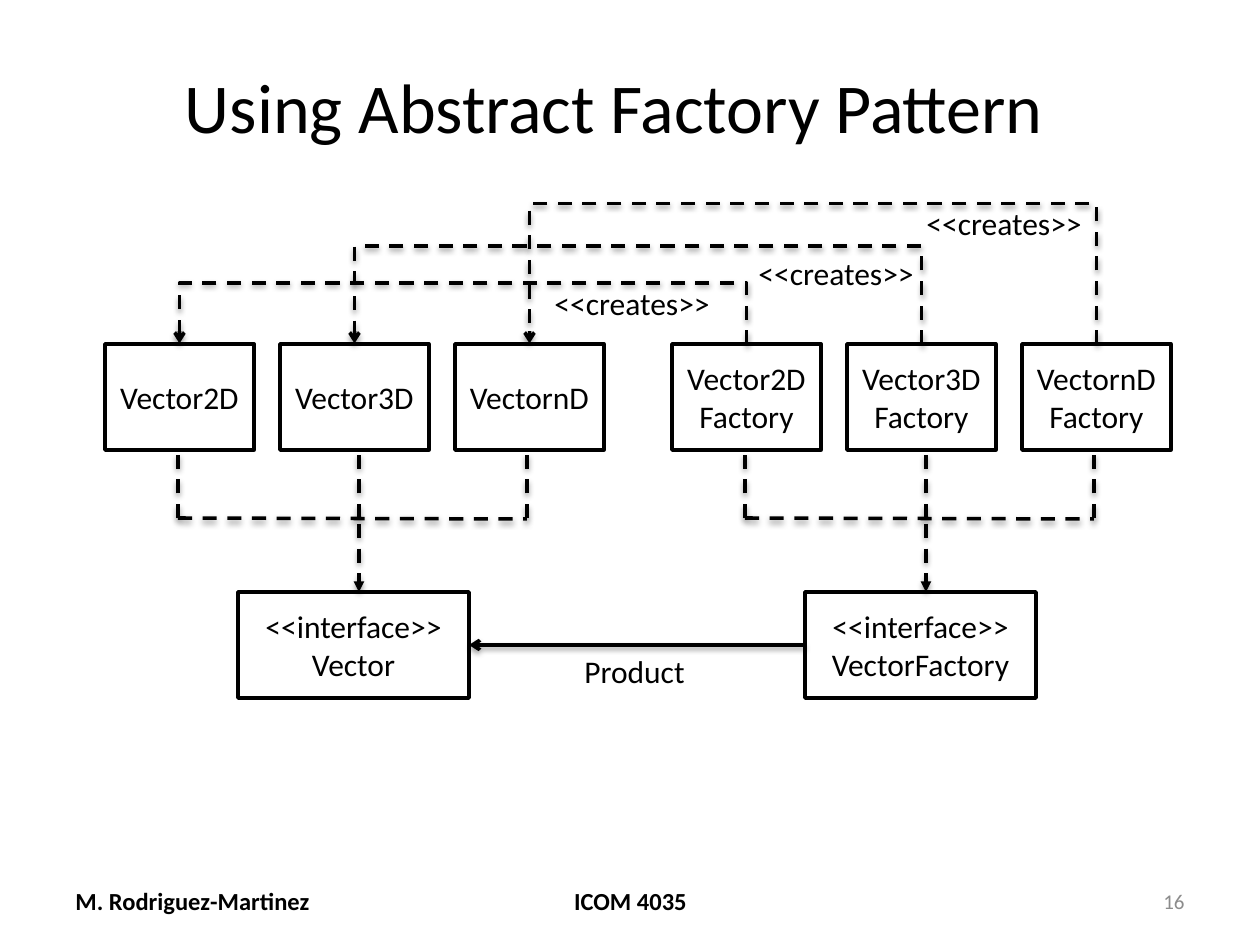
from pptx import Presentation
from pptx.dml.color import RGBColor
from pptx.enum.dml import MSO_LINE
from pptx.enum.shapes import MSO_CONNECTOR, MSO_SHAPE
from pptx.enum.text import MSO_ANCHOR, MSO_AUTO_SIZE, PP_ALIGN
from pptx.oxml.ns import qn
from pptx.util import Emu, Pt
from lxml import etree

COLORS = {"ink": "000000", "paper": "FFFFFF", "page_number": "8C8C8C"}
FONT = "Calibri"
EMU_PER_PX = 914400 / 126

BOX_WIDTH, BOX_HEIGHT, BOX_PITCH = 149, 106, 175
CLASS_TOP, INTERFACE_TOP = 344, 592
CLASS_BOTTOM = CLASS_TOP + BOX_HEIGHT
BUS_Y = 518
PRODUCT_LEFT, FACTORY_LEFT = 105, 672
CREATES_RISES = (62, 99, 142)


def px(value):
    return Emu(round(value * EMU_PER_PX))


def color(name):
    return RGBColor.from_string(COLORS[name])


def write(shape, lines, size, align, bold=False, ink="ink"):
    frame = shape.text_frame
    frame.text = "\n".join(lines)
    for paragraph in frame.paragraphs:
        paragraph.alignment = align
        paragraph.font.name = FONT
        paragraph.font.size = Pt(size)
        paragraph.font.bold = bold
        paragraph.font.color.rgb = color(ink)


def add_text(slide, bounds, text, size, align, **style):
    shape = slide.shapes.add_textbox(*map(px, bounds))
    shape.text_frame.word_wrap = True
    shape.text_frame.vertical_anchor = MSO_ANCHOR.MIDDLE
    write(shape, [text], size, align, **style)


def add_label(slide, left, top, width, text):
    shape = slide.shapes.add_textbox(px(left), px(top), px(width), px(50))
    shape.text_frame.word_wrap = False
    shape.text_frame.auto_size = MSO_AUTO_SIZE.SHAPE_TO_FIT_TEXT
    write(shape, [text], 18, PP_ALIGN.LEFT)


def add_box(slide, left, top, width, lines):
    shape = slide.shapes.add_shape(
        MSO_SHAPE.RECTANGLE, px(left), px(top), px(width), px(BOX_HEIGHT))
    shape.shadow.inherit = False
    shape.fill.solid()
    shape.fill.fore_color.rgb = color("paper")
    shape.line.color.rgb = color("ink")
    shape.line.width = Pt(2)
    shape.text_frame.word_wrap = True
    shape.text_frame.vertical_anchor = MSO_ANCHOR.MIDDLE
    write(shape, lines, 18, PP_ALIGN.CENTER)
    return shape


def add_line(slide, start, end, dashed=True, arrow=None, kind=MSO_CONNECTOR.STRAIGHT):
    """Add a connector that keeps the theme's soft shadow."""
    connector = slide.shapes.add_connector(kind, *map(px, (*start, *end)))
    connector.line.color.rgb = color("ink")
    connector.line.width = Pt(2)
    if dashed:
        connector.line.dash_style = MSO_LINE.DASH
    if arrow:
        line = connector.line._get_or_add_ln()
        etree.SubElement(line, qn("a:tailEnd"), type=arrow)
    return connector


def add_creates_arrow(slide, start_x, end_x, rise):
    """Add an elbow that climbs by rise, runs left and drops onto a class box."""
    span = start_x - end_x
    center_x = (start_x + end_x) / 2
    # A one-pixel-wide box turned upright, so the adjustment equals the rise.
    connector = add_line(
        slide, (center_x - 0.5, CLASS_TOP - span / 2),
        (center_x + 0.5, CLASS_TOP + span / 2),
        arrow="arrow", kind=MSO_CONNECTOR.ELBOW)
    properties = connector._element.spPr
    transform = properties.find(qn("a:xfrm"))
    transform.set("rot", "16200000")
    transform.set("flipV", "1")
    geometry = properties.find(qn("a:prstGeom"))
    adjustments = geometry.find(qn("a:avLst"))
    if adjustments is None:
        adjustments = etree.SubElement(geometry, qn("a:avLst"))
    etree.SubElement(adjustments, qn("a:gd"), name="adj1", fmla=f"val {rise * 100000}")


def add_hierarchy(slide, left, class_lines, interface_name):
    """Add three class boxes joined by dashed lines to their interface."""
    for index, lines in enumerate(class_lines):
        add_box(slide, left + index * BOX_PITCH, CLASS_TOP, BOX_WIDTH, lines)
    interface = add_box(slide, left + 133, INTERFACE_TOP, 231,
                        ["<<interface>>", interface_name])
    first, middle, last = left + 73, left + 254, left + 422
    add_line(slide, (first, BUS_Y), (last, BUS_Y + 1))
    for x in (first, middle, last):
        add_line(slide, (x, BUS_Y), (x, CLASS_BOTTOM))
    add_line(slide, (middle, BUS_Y + 6), (middle, INTERFACE_TOP), arrow="triangle")
    return interface


def main():
    presentation = Presentation()
    presentation.slide_width, presentation.slide_height = px(1260), px(945)
    slide = presentation.slides.add_slide(presentation.slide_layouts[6])

    add_text(slide, (47, 38, 1134, 135), "Using Abstract Factory Pattern", 40,
             PP_ALIGN.CENTER)
    add_text(slide, (63, 876, 294, 50), "M. Rodriguez-Martinez", 14,
             PP_ALIGN.LEFT, bold=True)
    add_text(slide, (431, 876, 399, 50), "ICOM 4035", 14, PP_ALIGN.CENTER, bold=True)
    add_text(slide, (903, 876, 294, 50), "16", 12, PP_ALIGN.RIGHT, ink="page_number")

    names = ("Vector2D", "Vector3D", "VectornD")
    vector = add_hierarchy(slide, PRODUCT_LEFT, [[name] for name in names], "Vector")
    factory = add_hierarchy(slide, FACTORY_LEFT, [[name, "Factory"] for name in names],
                            "VectorFactory")

    for index, rise in enumerate(CREATES_RISES):
        offset = index * BOX_PITCH + BOX_WIDTH / 2
        add_creates_arrow(slide, FACTORY_LEFT + offset, PRODUCT_LEFT + offset, rise)
    for left, top in ((542, 278), (746, 248), (914, 198)):
        add_label(slide, left, top, 184, "<<creates>>")

    product = add_line(slide, (805, 645), (469, 645), dashed=False, arrow="arrow")
    product.begin_connect(factory, 1)
    product.end_connect(vector, 3)
    add_label(slide, 572, 646, 128, "Product")

    presentation.save("out.pptx")


if __name__ == "__main__":
    main()
